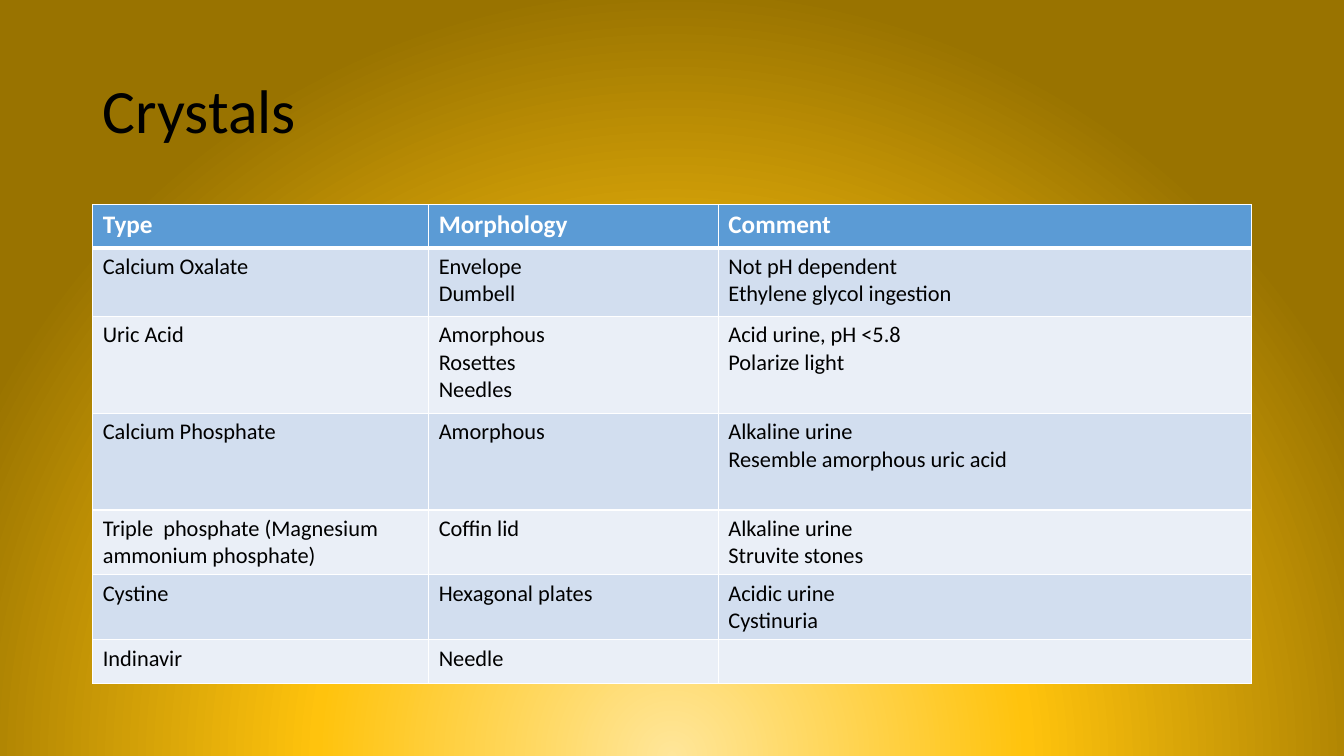
from lxml.etree import SubElement
from pptx import Presentation
from pptx.dml.color import RGBColor
from pptx.enum.text import MSO_ANCHOR, MSO_AUTO_SIZE, PP_ALIGN
from pptx.oxml.ns import qn
from pptx.util import Inches, Pt

SLIDE_WIDTH, SLIDE_HEIGHT = 13.33, 7.5
MARGIN = 0.92
CONTENT_WIDTH = SLIDE_WIDTH - 2 * MARGIN
TITLE_TOP, TITLE_HEIGHT = 0.4, 1.45
TABLE_TOP = 2.03
FONT = "Calibri"
BLACK, WHITE = "000000", "FFFFFF"
HEADER_FILL = "5B9BD5"
BAND_FILLS = ["D2DEEF", "EAEFF7"]
BACKGROUND_STOPS = [(0, "FFE699"), (46, "FFC30D"), (100, "997300")]
BACKGROUND_FOCUS = {"l": 50, "t": 130, "r": 50, "b": -30}
COLUMN_SHARES = [0.29, 0.25, 0.46]
ROW_HEIGHTS = [0.43, 0.68, 0.96, 0.96, 0.64, 0.64, 0.43]
CRYSTALS = [
    ("Type", "Morphology", "Comment"),
    ("Calcium Oxalate", "Envelope\nDumbell", "Not pH dependent\nEthylene glycol ingestion"),
    ("Uric Acid", "Amorphous\nRosettes\nNeedles", "Acid urine, pH <5.8\nPolarize light"),
    ("Calcium Phosphate", "Amorphous", "Alkaline urine\nResemble amorphous uric acid"),
    ("Triple  phosphate (Magnesium ammonium phosphate)", "Coffin lid",
     "Alkaline urine\nStruvite stones"),
    ("Cystine", "Hexagonal plates", "Acidic urine\nCystinuria"),
    ("Indinavir", "Needle", ""),
]


def color(value):
    return RGBColor.from_string(value)


def add_color(parent, value):
    return SubElement(parent, qn("a:srgbClr"), val=str(color(value)))


def add_run(paragraph, text, size, font_color, bold=False):
    run = paragraph.add_run()
    run.text = text
    run.font.name = FONT
    run.font.size = Pt(size)
    run.font.bold = bold
    run.font.color.rgb = color(font_color)


def paint_background(slide):
    slide.background.fill.solid()
    properties = slide.element.find(".//" + qn("p:bgPr"))
    properties.remove(properties.find(qn("a:solidFill")))
    gradient = SubElement(properties, qn("a:gradFill"), rotWithShape="1")
    properties.insert(0, gradient)
    stops = SubElement(gradient, qn("a:gsLst"))
    for position, value in BACKGROUND_STOPS:
        add_color(SubElement(stops, qn("a:gs"), pos=str(position * 1000)), value)
    circle = SubElement(gradient, qn("a:path"), attrib={"path": "circle"})
    focus = {side: str(share * 1000) for side, share in BACKGROUND_FOCUS.items()}
    SubElement(circle, qn("a:fillToRect"), attrib=focus)


def place_title(slide, text):
    title = slide.shapes.title
    title.left, title.top = Inches(MARGIN), Inches(TITLE_TOP)
    title.width, title.height = Inches(CONTENT_WIDTH), Inches(TITLE_HEIGHT)
    frame = title.text_frame
    frame.auto_size = MSO_AUTO_SIZE.NONE
    frame.vertical_anchor = MSO_ANCHOR.MIDDLE
    paragraph = frame.paragraphs[0]
    paragraph.alignment = PP_ALIGN.LEFT
    paragraph.line_spacing = 0.9
    add_run(paragraph, text, 44, BLACK)


def add_borders(cell, top=1, bottom=1):
    properties = cell._tc.get_or_add_tcPr()
    for side, width in (("L", 1), ("R", 1), ("T", top), ("B", bottom)):
        line = SubElement(properties, qn("a:ln" + side), w=str(Pt(width)))
        add_color(SubElement(line, qn("a:solidFill")), WHITE)


def fill_cell(cell, text, row_index):
    is_header = row_index == 0
    add_borders(cell, top=3 if row_index == 1 else 1, bottom=3 if is_header else 1)
    cell.fill.solid()
    cell.fill.fore_color.rgb = color(HEADER_FILL if is_header else BAND_FILLS[(row_index - 1) % 2])
    if not text:
        return
    frame = cell.text_frame
    for index, line in enumerate(text.split("\n")):
        paragraph = frame.add_paragraph() if index else frame.paragraphs[0]
        if is_header:
            add_run(paragraph, line, 18, WHITE, bold=True)
        else:
            add_run(paragraph, line, 16, BLACK)


def add_crystal_table(slide):
    table = slide.shapes.add_table(
        len(CRYSTALS), len(COLUMN_SHARES), Inches(MARGIN), Inches(TABLE_TOP),
        Inches(CONTENT_WIDTH), Inches(sum(ROW_HEIGHTS))).table
    for column, share in zip(table.columns, COLUMN_SHARES):
        column.width = Inches(CONTENT_WIDTH * share)
    for row_index, (row, height) in enumerate(zip(table.rows, ROW_HEIGHTS)):
        row.height = Inches(height)
        for cell, text in zip(row.cells, CRYSTALS[row_index]):
            fill_cell(cell, text, row_index)


def main():
    presentation = Presentation()
    presentation.slide_width = Inches(SLIDE_WIDTH)
    presentation.slide_height = Inches(SLIDE_HEIGHT)
    slide = presentation.slides.add_slide(presentation.slide_layouts.get_by_name("Title Only"))
    paint_background(slide)
    place_title(slide, "Crystals")
    add_crystal_table(slide)
    presentation.save("out.pptx")


if __name__ == "__main__":
    main()
